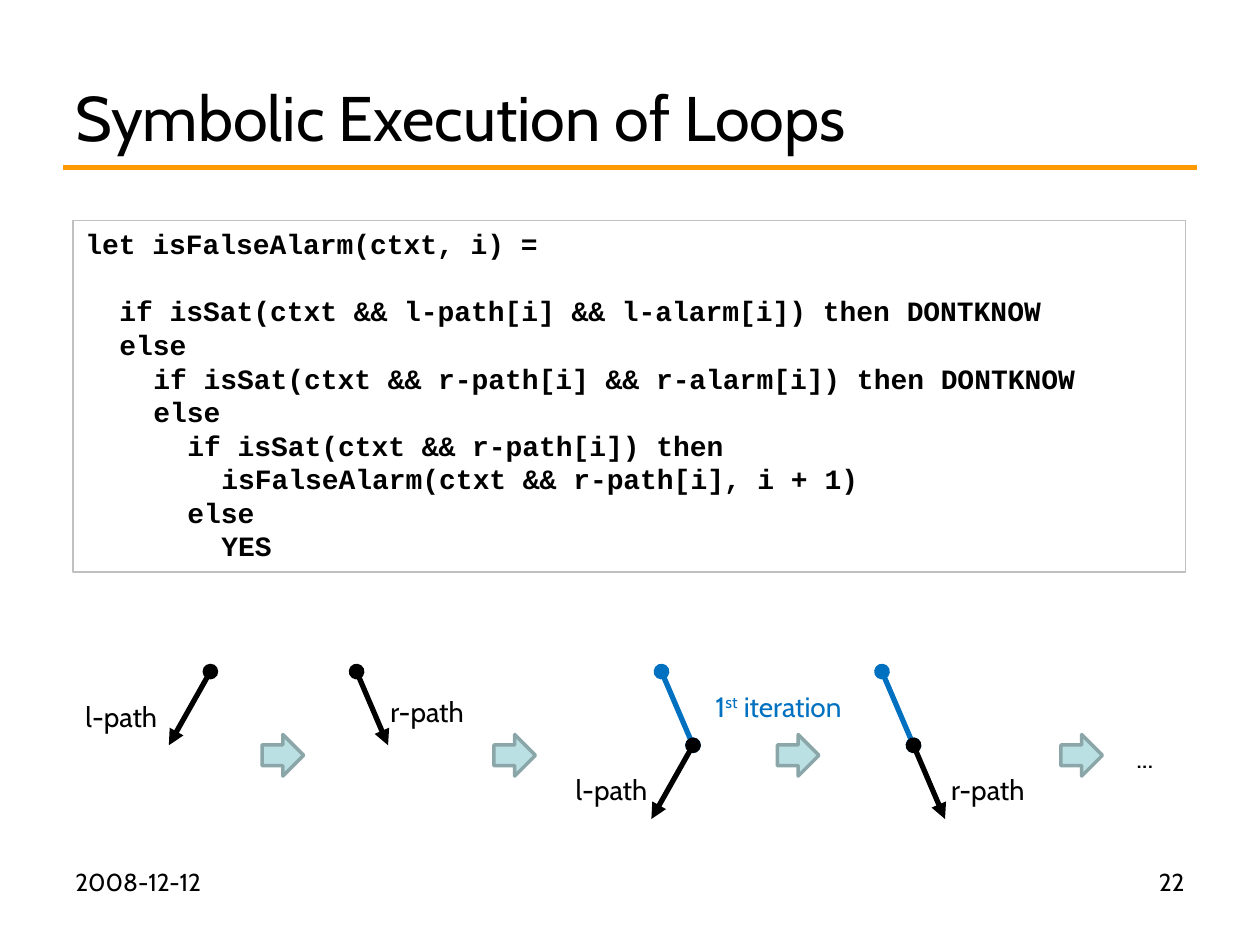
from collections import namedtuple
from dataclasses import dataclass

from lxml import etree
from pptx import Presentation
from pptx.dml.color import RGBColor
from pptx.enum.shapes import MSO_CONNECTOR, MSO_SHAPE
from pptx.enum.text import MSO_ANCHOR, MSO_AUTO_SIZE, PP_ALIGN
from pptx.oxml.ns import qn
from pptx.util import Inches, Pt

STRAIGHT = MSO_CONNECTOR.STRAIGHT
RECTANGLE, RIGHT_ARROW = MSO_SHAPE.RECTANGLE, MSO_SHAPE.RIGHT_ARROW
TOP, MIDDLE = MSO_ANCHOR.TOP, MSO_ANCHOR.MIDDLE
LEFT, RIGHT = PP_ALIGN.LEFT, PP_ALIGN.RIGHT
GROW = MSO_AUTO_SIZE.SHAPE_TO_FIT_TEXT

Box = namedtuple("Box", "left top width height")


@dataclass(frozen=True)
class Theme:
    """Colours, fonts and sizes of the slide."""
    ink: str = "000000"
    rule: str = "FF9900"
    frame: str = "C0C0C0"
    iteration: str = "0070C0"
    arrow_fill: str = "BBE0E3"
    arrow_line: str = "8AA6A8"
    body_font: str = "Cabin"
    code_font: str = "Courier New"
    title_size: int = 36
    text_size: int = 16
    footer_size: int = 14
    code_pitch: float = 19.2
    code_indent: float = 0.27


THEME = Theme()

CODE = [
    (0, "let isFalseAlarm(ctxt, i) ="),
    (1, "if isSat(ctxt && l-path[i] && l-alarm[i]) then DONTKNOW"),
    (1, "else"),
    (2, "if isSat(ctxt && r-path[i] && r-alarm[i]) then DONTKNOW"),
    (2, "else"),
    (3, "if isSat(ctxt && r-path[i]) then"),
    (4, "isFalseAlarm(ctxt && r-path[i], i + 1)"),
    (3, "else"),
    (4, "YES"),
]

STEP_DX = {"l": -0.33, "r": 0.25}
PATHS = [(1.09, "l"), (2.25, "r"), (4.67, "rl"), (6.42, "rr")]
PATH_LABELS = [
    (0, 0.17, 0.78, "l-path"),
    (2.42, 0.13, 0.8, "r-path"),
    (3.89, 0.75, 0.78, "l-path"),
    (6.87, 0.75, 0.8, "r-path"),
    (8.34, 0.5, 0.41, "..."),
]
ARROW_LEFTS = [1.5, 3.34, 5.59, 7.84]


def set_formats(target, formats):
    """Set every named format value on the target."""
    for name, value in formats.items():
        setattr(target, name, value)


def add_run(paragraph, text, size, color=THEME.ink, font=THEME.body_font, bold=False):
    """Append a formatted run and return it."""
    run = paragraph.add_run()
    run.text = text
    set_formats(run.font, {"size": Pt(size), "name": font, "bold": bold})
    run.font.color.rgb = RGBColor.from_string(color)
    return run


def add_text_frame(slide, box, **formats):
    """Add a text box and return its formatted frame."""
    frame = slide.shapes.add_textbox(*map(Inches, box)).text_frame
    set_formats(frame, {"word_wrap": True, **formats})
    return frame


def add_line(slide, start, end, color, head=None, tail=None):
    """Draw a thick line with optional end marks."""
    line = slide.shapes.add_connector(STRAIGHT, *map(Inches, (*start, *end)))
    line.line.width = Pt(3)
    line.line.color.rgb = RGBColor.from_string(color)
    stroke = line.line._get_or_add_ln()
    for tag, mark in (("a:headEnd", head), ("a:tailEnd", tail)):
        if mark:
            etree.SubElement(stroke, qn(tag)).set("type", mark)
    etree.SubElement(line._element.spPr, qn("a:effectLst"))


def add_panel(slide, kind, box, line_color, line_width, fill=None):
    """Add a flat outlined shape with an optional fill."""
    panel = slide.shapes.add_shape(kind, *map(Inches, box))
    panel.shadow.inherit = False
    panel.line.color.rgb = RGBColor.from_string(line_color)
    panel.line.width = Pt(line_width)
    if fill:
        panel.fill.solid()
        panel.fill.fore_color.rgb = RGBColor.from_string(fill)
    else:
        panel.fill.background()
    return panel


def add_header(slide, box):
    """Place the title and the rule through the foot of its box."""
    rule_top = box.top + 1.03
    add_line(slide, (box.left, rule_top), (box.left + box.width, rule_top), THEME.rule)
    frame = add_text_frame(slide, box, vertical_anchor=MIDDLE)
    add_run(frame.paragraphs[0], "Symbolic Execution of Loops", THEME.title_size)


def add_code(slide, box):
    """Place the framed listing, indented by nesting level."""
    frame = add_panel(slide, RECTANGLE, box, THEME.frame, 0.75).text_frame
    set_formats(frame, {"word_wrap": True, "vertical_anchor": TOP})
    for row, (level, text) in enumerate(CODE):
        line = frame.add_paragraph() if row else frame.paragraphs[0]
        set_formats(line, {
            "alignment": LEFT,
            "line_spacing": Pt(THEME.code_pitch),
            "space_after": Pt(0 if row else THEME.code_pitch),
        })
        line._p.get_or_add_pPr().set("marL", str(Inches(level * THEME.code_indent)))
        add_run(line, text, THEME.text_size, font=THEME.code_font, bold=True)


def add_path(slide, x, top, step_height, turns):
    """Draw a chain of steps: past iterations, then the current one."""
    for index, turn in enumerate(turns):
        current = index == len(turns) - 1
        start = (x, top + index * step_height)
        x += STEP_DX[turn]
        end = (x, start[1] + step_height)
        color = THEME.ink if current else THEME.iteration
        add_line(slide, start, end, color, "oval", "triangle" if current else "oval")


def add_unrolling(slide, box):
    """Place the paths, their labels and the arrows between them."""
    for start, turns in PATHS:
        add_path(slide, box.left + start, box.top, box.height / 2, turns)
    label_formats = {"word_wrap": False, "auto_size": GROW}
    for left, top, width, text in PATH_LABELS:
        label_box = Box(box.left + left, box.top + top, width, 0.37)
        frame = add_text_frame(slide, label_box, **label_formats)
        add_run(frame.paragraphs[0], text, THEME.text_size)
    iteration_box = Box(box.left + 5, box.top + 0.09, 1.32, 0.37)
    iteration = add_text_frame(slide, iteration_box, **label_formats).paragraphs[0]
    for text, baseline in (("1", 0), ("st", 30000), (" iteration", 0)):
        run = add_run(iteration, text, THEME.text_size, THEME.iteration)
        run.font._element.set("baseline", str(baseline))
    for left in ARROW_LEFTS:
        arrow_box = Box(box.left + left, box.top + 0.5, 0.33, 0.33)
        add_panel(slide, RIGHT_ARROW, arrow_box, THEME.arrow_line, 2, THEME.arrow_fill)


def add_footer(slide, box):
    """Place the date at the left and the slide number at the right."""
    width = 2.33
    number_left = box.left + box.width - width
    for left, text, side in ((box.left, "2008-12-12", LEFT), (number_left, "22", RIGHT)):
        frame = add_text_frame(slide, Box(left, box.top, width, box.height))
        frame.paragraphs[0].alignment = side
        add_run(frame.paragraphs[0], text, THEME.footer_size)


def main():
    """Build and save the slide."""
    deck = Presentation()
    set_formats(deck, {"slide_width": Inches(10), "slide_height": Inches(7.5)})
    slide = deck.slides.add_slide(deck.slide_layouts[6])
    add_header(slide, Box(0.5, 0.3, 9, 1.25))
    add_code(slide, Box(0.58, 1.75, 8.83, 2.79))
    add_unrolling(slide, Box(0.58, 5.33, 8.75, 1.17))
    add_footer(slide, Box(0.5, 6.83, 9, 0.52))
    deck.save("out.pptx")


if __name__ == "__main__":
    main()
